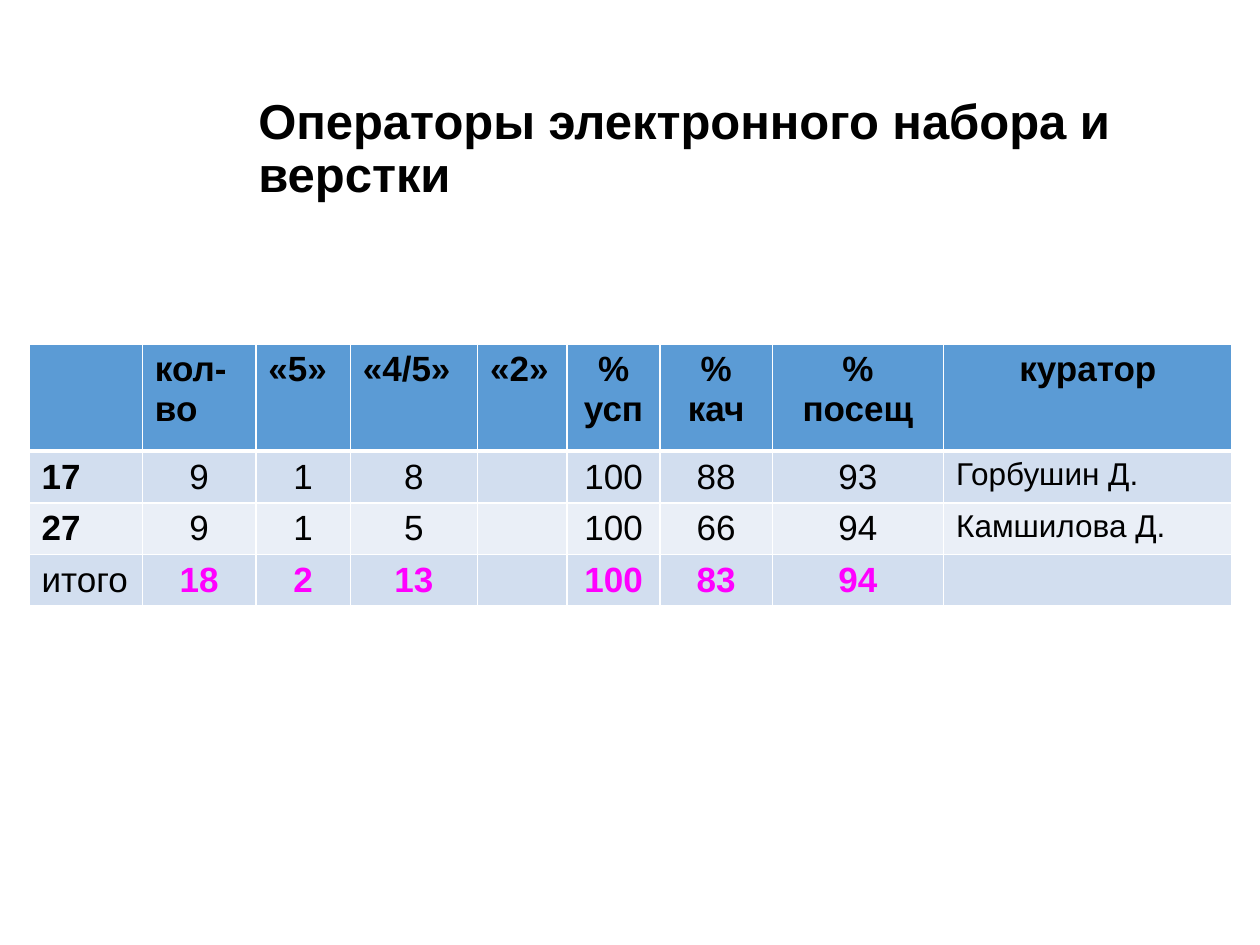
from lxml import etree
from pptx import Presentation
from pptx.dml.color import RGBColor
from pptx.enum.text import MSO_ANCHOR, PP_ALIGN
from pptx.oxml.ns import qn
from pptx.util import Inches, Pt

LEFT, CENTER = PP_ALIGN.LEFT, PP_ALIGN.CENTER
MIDDLE = MSO_ANCHOR.MIDDLE

BLACK = RGBColor(0x00, 0x00, 0x00)
WHITE = RGBColor(0xFF, 0xFF, 0xFF)
MAGENTA = RGBColor(0xFF, 0x00, 0xFF)
HEADER_BLUE = RGBColor(0x5B, 0x9B, 0xD5)
BANDS = (RGBColor(0xD2, 0xDE, 0xEF), RGBColor(0xEA, 0xEF, 0xF7))

COLUMN_WIDTHS = (0.9, 0.9, 0.75, 1.01, 0.71, 0.74, 0.89, 1.36, 2.29)
ROW_HEIGHTS = (0.85, 0.41, 0.41, 0.41)
ROWS = (
    ("", "кол-во", "«5»", "«4/5»", "«2»", "% усп", "% кач", "%\nпосещ", "куратор"),
    ("17", "9", "1", "8", "", "100", "88", "93", "Горбушин Д."),
    ("27", "9", "1", "5", "", "100", "66", "94", "Камшилова Д."),
    ("итого", "18", "2", "13", "", "100", "83", "94", ""),
)
TOTAL_ROW = len(ROWS) - 1
CURATOR_COLUMN = len(COLUMN_WIDTHS) - 1
FIRST_CENTERED_HEADER = 5


class SlideBuilder:
    font_name = "Arial"

    def __init__(self, deck):
        self.deck = deck
        self.slide = deck.slides.add_slide(deck.slide_layouts[5])

    def frame(self, left, top, width, height):
        """Turn shares of the slide's size into lengths."""
        across, down = self.deck.slide_width, self.deck.slide_height
        return (round(left * across), round(top * down),
                round(width * across), round(height * down))

    def add_text(self, para, text, size, bold, color=BLACK, align=LEFT):
        para.alignment = align
        span = para.add_run()
        span.text = text
        font = span.font
        font.name, font.size, font.bold = self.font_name, Pt(size), bold
        font.color.rgb = color

    def title(self, text, share):
        box = self.slide.shapes.title
        box.left, box.top, box.width, box.height = self.frame(*share)
        box.text_frame.vertical_anchor = MIDDLE
        para = box.text_frame.paragraphs[0]
        para.line_spacing = 0.9
        self.add_text(para, text, 28, True)

    def table(self, share):
        table = self.slide.shapes.add_table(
            len(ROWS), len(COLUMN_WIDTHS), *self.frame(*share)).table
        for column, width in zip(table.columns, COLUMN_WIDTHS):
            column.width = Inches(width)
        for row, height in zip(table.rows, ROW_HEIGHTS):
            row.height = Inches(height)
        for row, texts in enumerate(ROWS):
            for column, text in enumerate(texts):
                self.cell(table.cell(row, column), row, column, text)

    def cell(self, cell, row, column, text):
        cell.fill.solid()
        cell.fill.fore_color.rgb = BANDS[(row - 1) % 2] if row else HEADER_BLUE
        self.borders(cell, top=3 if row == 1 else 1, bottom=1 if row else 3)
        if not text:
            return
        if row == 0:
            bold, centered = True, column >= FIRST_CENTERED_HEADER
        else:
            bold = (column == 0) != (row == TOTAL_ROW)
            centered = 0 < column < CURATOR_COLUMN
        size = 18 if row and column == CURATOR_COLUMN else 20
        color = MAGENTA if row == TOTAL_ROW and column else BLACK
        frame = cell.text_frame
        for index, line in enumerate(text.split("\n")):
            para = frame.add_paragraph() if index else frame.paragraphs[0]
            self.add_text(para, line, size, bold, color, CENTER if centered else LEFT)

    def borders(self, cell, top, bottom):
        properties = cell._tc.get_or_add_tcPr()
        sides = (("a:lnL", 1), ("a:lnR", 1), ("a:lnT", top), ("a:lnB", bottom))
        for index, (tag, points) in enumerate(sides):
            line = etree.Element(qn(tag), w=str(Pt(points)))
            fill = etree.SubElement(line, qn("a:solidFill"))
            etree.SubElement(fill, qn("a:srgbClr"), val=str(WHITE))
            properties.insert(index, line)


def main():
    deck = Presentation()
    deck.slide_width, deck.slide_height = Inches(10), Inches(7.5)
    builder = SlideBuilder(deck)
    builder.title("Операторы электронного набора и верстки",
                  (0.195, 0.063, 0.78, 0.192))
    builder.table((0.023, 0.364, 0.954, 0.28))
    deck.save("out.pptx")


if __name__ == "__main__":
    main()
